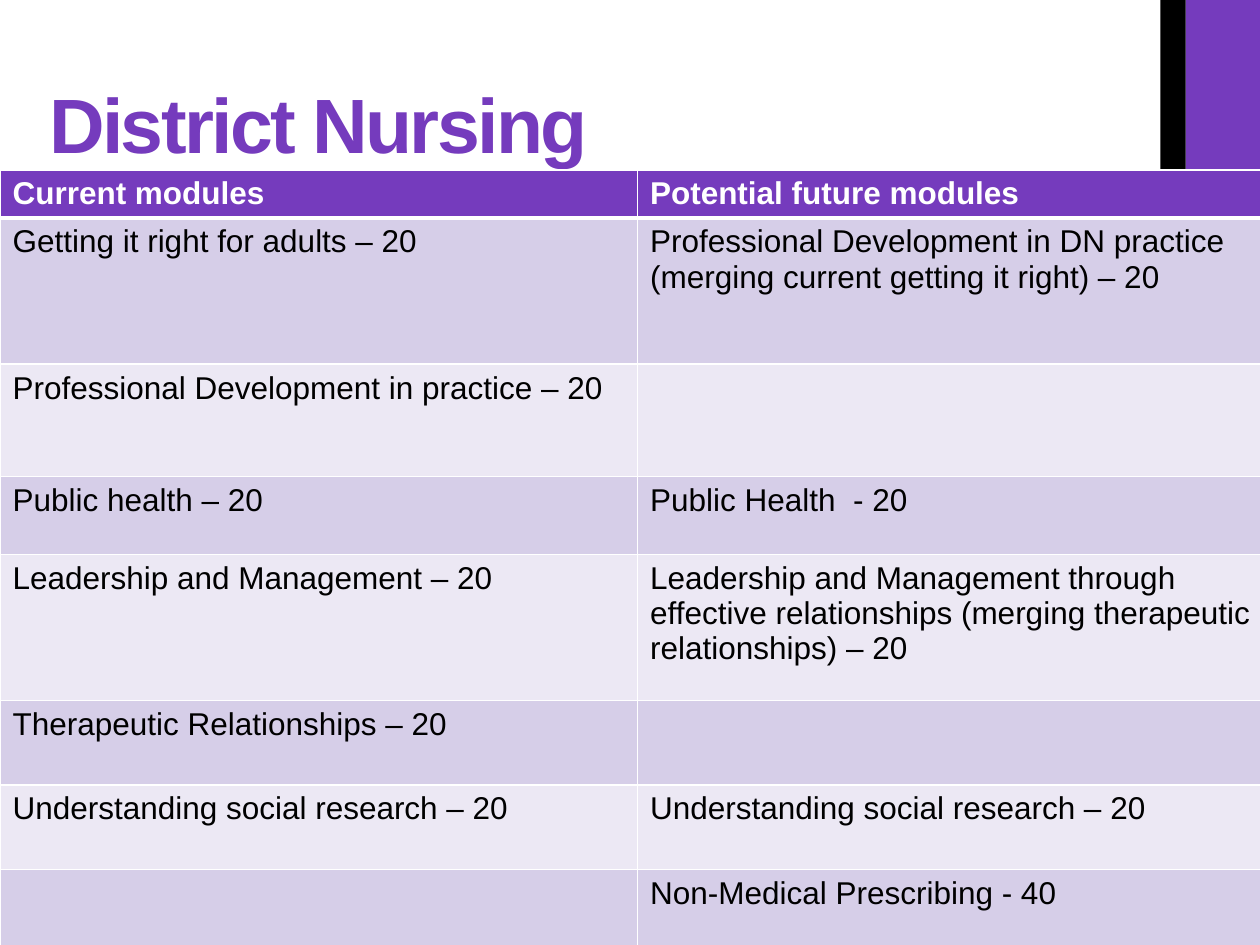
from lxml.etree import SubElement
from pptx import Presentation
from pptx.dml.color import RGBColor
from pptx.enum.shapes import MSO_SHAPE as Shape
from pptx.enum.text import MSO_ANCHOR as Anchor, PP_ALIGN as Align
from pptx.oxml.ns import qn
from pptx.util import Inches, Pt

COLORS = {
    "purple": "753BBD",
    "black": "000000",
    "white": "FFFFFF",
    "band_dark": "D6CEE8",
    "band_light": "ECE8F4",
}
SLIDE_WIDTH, SLIDE_HEIGHT = 10, 7.5
TITLE_BOX = (0.39, -0.21, 8.41, 1.56)
STRIPE_BOX = (9.21, 0, 0.79, SLIDE_HEIGHT)
TABLE_BOX = (0, 1.35, 10.12, 6.15)
ROW_HEIGHTS = [0.36, 1.16, 0.89, 0.62, 1.16, 0.67, 0.67, 0.62]
MODULES = [
    ("Current modules", "Potential future modules"),
    ("Getting it right for adults – 20",
     "Professional Development in DN practice (merging current getting it right) – 20"),
    ("Professional Development in practice – 20", ""),
    ("Public health – 20", "Public Health  - 20"),
    ("Leadership and Management – 20",
     "Leadership and Management through effective relationships "
     "(merging therapeutic relationships) – 20"),
    ("Therapeutic Relationships – 20", ""),
    ("Understanding social research – 20", "Understanding social research – 20"),
    ("", "Non-Medical Prescribing - 40"),
]


def rgb(name):
    """Return the named palette colour."""
    return RGBColor.from_string(COLORS[name])


def write_text(frame, text, size=18, color="black", bold=False, spacing=None, line=None):
    """Write one formatted paragraph into a text frame."""
    paragraph = frame.paragraphs[0]
    paragraph.alignment = Align.LEFT
    paragraph.line_spacing = line
    paragraph.font.size = Pt(size)
    if not text:
        return
    run = paragraph.add_run()
    run.text = text
    run.font.name = "Arial"
    run.font.size = Pt(size)
    run.font.bold = bold
    run.font.color.rgb = rgb(color)
    if spacing is not None:
        run.font._element.set("spc", str(round(spacing * 100)))


def add_stripes(slide, box):
    """Draw the black and purple stripes, a quarter and three quarters of the box."""
    left, top, width, height = box
    black = 0.2
    for offset, span, color in ((black, width - black, "purple"), (0, black, "black")):
        stripe = slide.shapes.add_shape(
            Shape.RECTANGLE, Inches(left + offset), Inches(top), Inches(span), Inches(height))
        stripe.shadow.inherit = False
        stripe.fill.solid()
        stripe.fill.fore_color.rgb = rgb(color)
        stripe.line.fill.background()


def place_title(slide, box, text):
    """Move and format the title placeholder."""
    title = slide.shapes.title
    title.left, title.top, title.width, title.height = map(Inches, box)
    frame = title.text_frame
    frame.word_wrap = True
    frame.vertical_anchor = Anchor.BOTTOM
    frame.margin_left = frame.margin_top = frame.margin_right = frame.margin_bottom = 0
    write_text(frame, text, size=44, color="purple", bold=True, spacing=-1.5, line=0.9)


def set_borders(cell, **widths):
    """Give the cell white borders with a width in points for each side."""
    properties = cell._tc.get_or_add_tcPr()
    for side, width in widths.items():
        border = SubElement(properties, qn(f"a:ln{side}"), w=str(Pt(width)))
        fill = SubElement(border, qn("a:solidFill"))
        SubElement(fill, qn("a:srgbClr"), val=COLORS["white"])


def add_module_table(slide, box, rows):
    """Add the banded two-column table of modules."""
    columns = len(rows[0])
    table = slide.shapes.add_table(len(rows), columns, *map(Inches, box)).table
    for column in table.columns:
        column.width = Inches(box[2] / columns)
    for index, (texts, height) in enumerate(zip(rows, ROW_HEIGHTS)):
        table.rows[index].height = Inches(height)
        header = index == 0
        band = "purple" if header else ("band_light", "band_dark")[index % 2]
        for cell, text in zip(table.rows[index].cells, texts):
            set_borders(cell, L=1, R=1, T=3 if index == 1 else 1, B=3 if header else 1)
            cell.fill.solid()
            cell.fill.fore_color.rgb = rgb(band)
            write_text(cell.text_frame, text, bold=header,
                       color="white" if header else "black")


def main():
    """Build and save the presentation."""
    presentation = Presentation()
    presentation.slide_width = Inches(SLIDE_WIDTH)
    presentation.slide_height = Inches(SLIDE_HEIGHT)
    slide = presentation.slides.add_slide(presentation.slide_layouts[5])
    add_stripes(slide, STRIPE_BOX)
    place_title(slide, TITLE_BOX, "District Nursing")
    add_module_table(slide, TABLE_BOX, MODULES)
    presentation.save("out.pptx")


if __name__ == "__main__":
    main()
